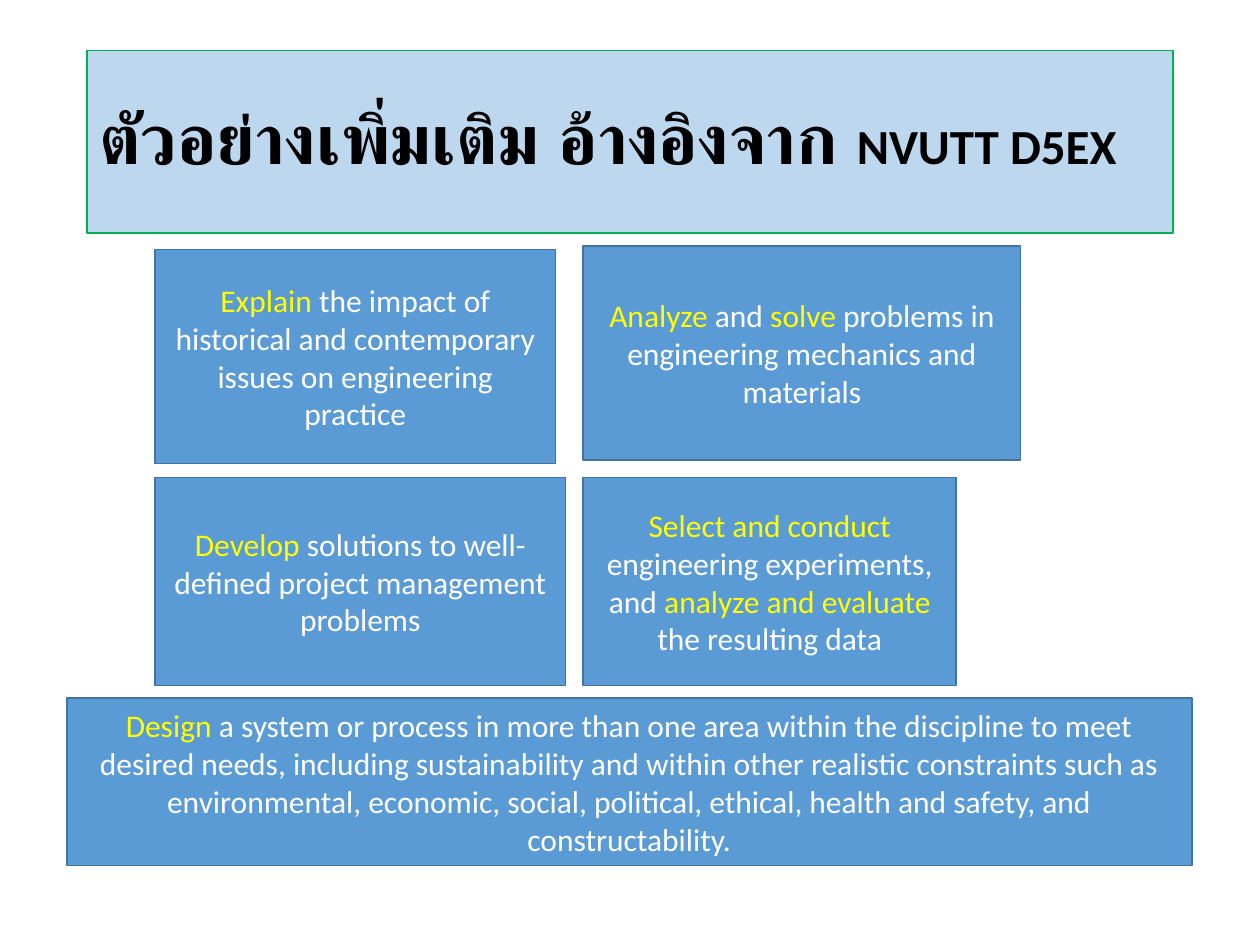
from pptx import Presentation
from pptx import util as u
from pptx.dml.color import RGBColor
from pptx.enum import shapes, text

COLS, ROWS = 100, 75


def rgb(value):
    return RGBColor.from_string(value)


class Deck:
    font = "Calibri"
    black, white, yellow = "000000", "FFFFFF", "FFFF00"
    title_fill, title_line = "BDD7EE", "00B050"
    box_fill, box_line = "5B9BD5", "43739E"

    def __init__(self):
        self.prs = Presentation()
        self.prs.slide_width, self.prs.slide_height = u.Inches(10), u.Inches(7.5)
        self.s = self.prs.slides.add_slide(self.prs.slide_layouts[5])

    def area(self, col, row, cols, rows):
        dx, dy = self.prs.slide_width / COLS, self.prs.slide_height / ROWS
        return [round(v) for v in (col * dx, row * dy, cols * dx, rows * dy)]

    def paint(self, sp, fill, line, width):
        sp.fill.solid()
        sp.fill.fore_color.rgb = rgb(fill)
        sp.line.color.rgb = rgb(line)
        sp.line.width = u.Pt(width)

    def paragraph(self, sp, align):
        tf = sp.text_frame
        tf.word_wrap = True
        tf.auto_size = text.MSO_AUTO_SIZE.NONE
        tf.vertical_anchor = text.MSO_ANCHOR.MIDDLE
        p = tf.paragraphs[0]
        p.alignment = align
        return p

    def run(self, p, words, size, color, bold=False):
        r = p.add_run()
        r.text = words
        r.font.name, r.font.size, r.font.bold = self.font, u.Pt(size), bold
        r.font.color.rgb = rgb(color)

    def title(self, place, runs):
        sp = self.s.shapes.title
        sp.left, sp.top, sp.width, sp.height = self.area(*place)
        self.paint(sp, self.title_fill, self.title_line, 0.75)
        p = self.paragraph(sp, text.PP_ALIGN.LEFT)
        p.line_spacing = 0.9
        for words, size in runs:
            self.run(p, words, size, self.black, True)

    def box(self, place, runs):
        sp = self.s.shapes.add_shape(shapes.MSO_SHAPE.RECTANGLE, *self.area(*place))
        sp.shadow.inherit = False
        self.paint(sp, self.box_fill, self.box_line, 1)
        p = self.paragraph(sp, text.PP_ALIGN.CENTER)
        for i, words in enumerate(runs):
            self.run(p, words, 18, self.white if i % 2 else self.yellow)


def main():
    deck = Deck()
    deck.title((6.9, 4, 86.2, 14.5),
               [("ตัวอย่างเพิ่มเติม อ้างอิงจาก ", 40), ("NVUTT D5EX", 28)])
    left, right, lower = 12.3, 46.3, 37.9
    outcomes = [
        ((right, 19.5, 34.7, 17),
         ["Analyze", " and ", "solve",
          " problems in engineering mechanics and materials"]),
        ((right, lower, 29.6, 16.5),
         ["Select and conduct ", "engineering experiments, and ",
          "analyze and evaluate ", "the resulting data"]),
        ((left, lower, 32.6, 16.5),
         ["Develop", " solutions to well-defined project management problems"]),
        ((left, 19.8, 31.8, 17),
         ["Explain", " the impact of historical and contemporary issues "
          "on engineering practice"]),
        ((5.3, 55.4, 89.3, 13.3),
         ["Design", " a system or process in more than one area within the "
          "discipline to meet desired needs, including sustainability and "
          "within other realistic constraints such as environmental, economic, "
          "social, political, ethical, health and safety, and constructability."]),
    ]
    for place, runs in outcomes:
        deck.box(place, runs)
    deck.prs.save("out.pptx")


if __name__ == "__main__":
    main()
